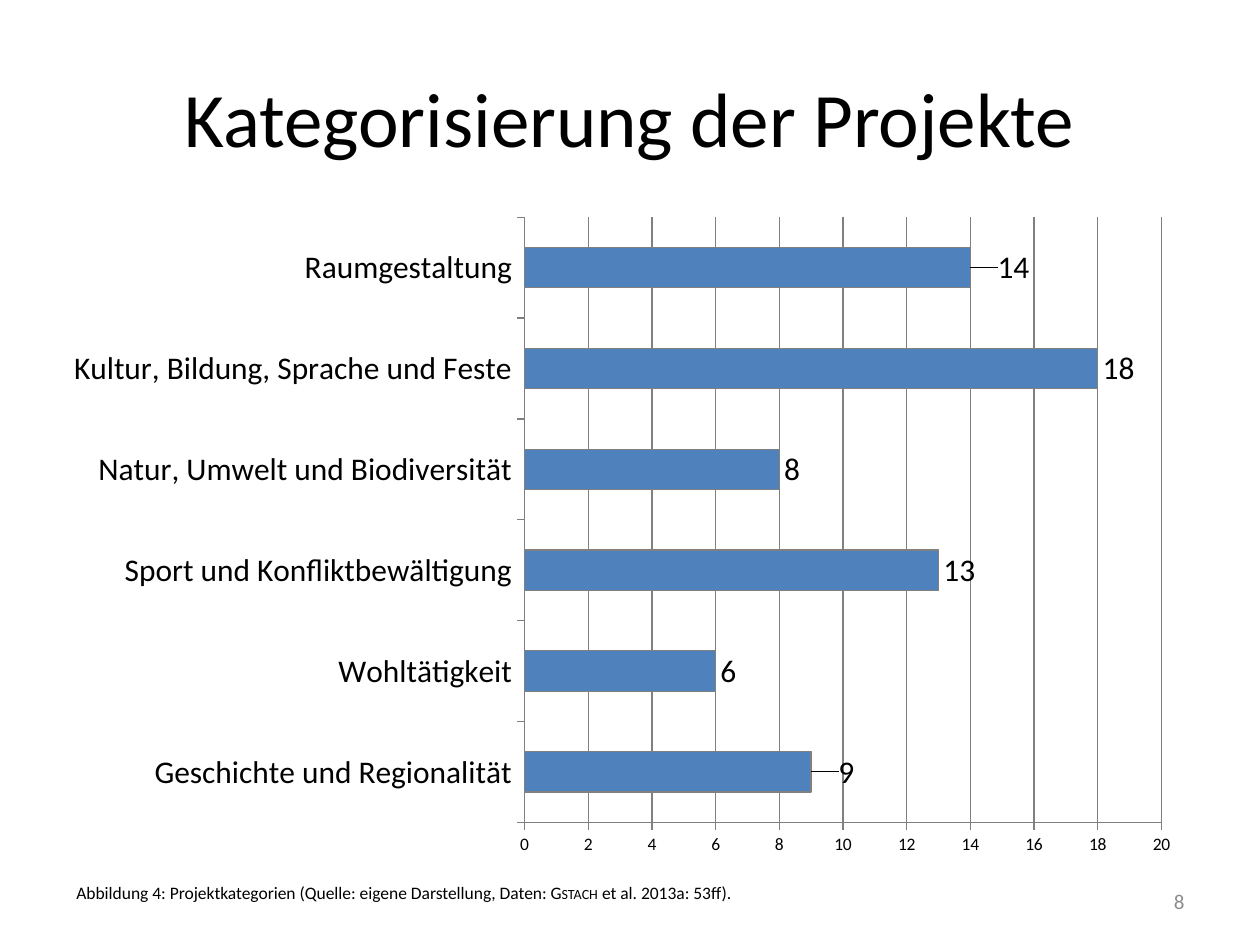
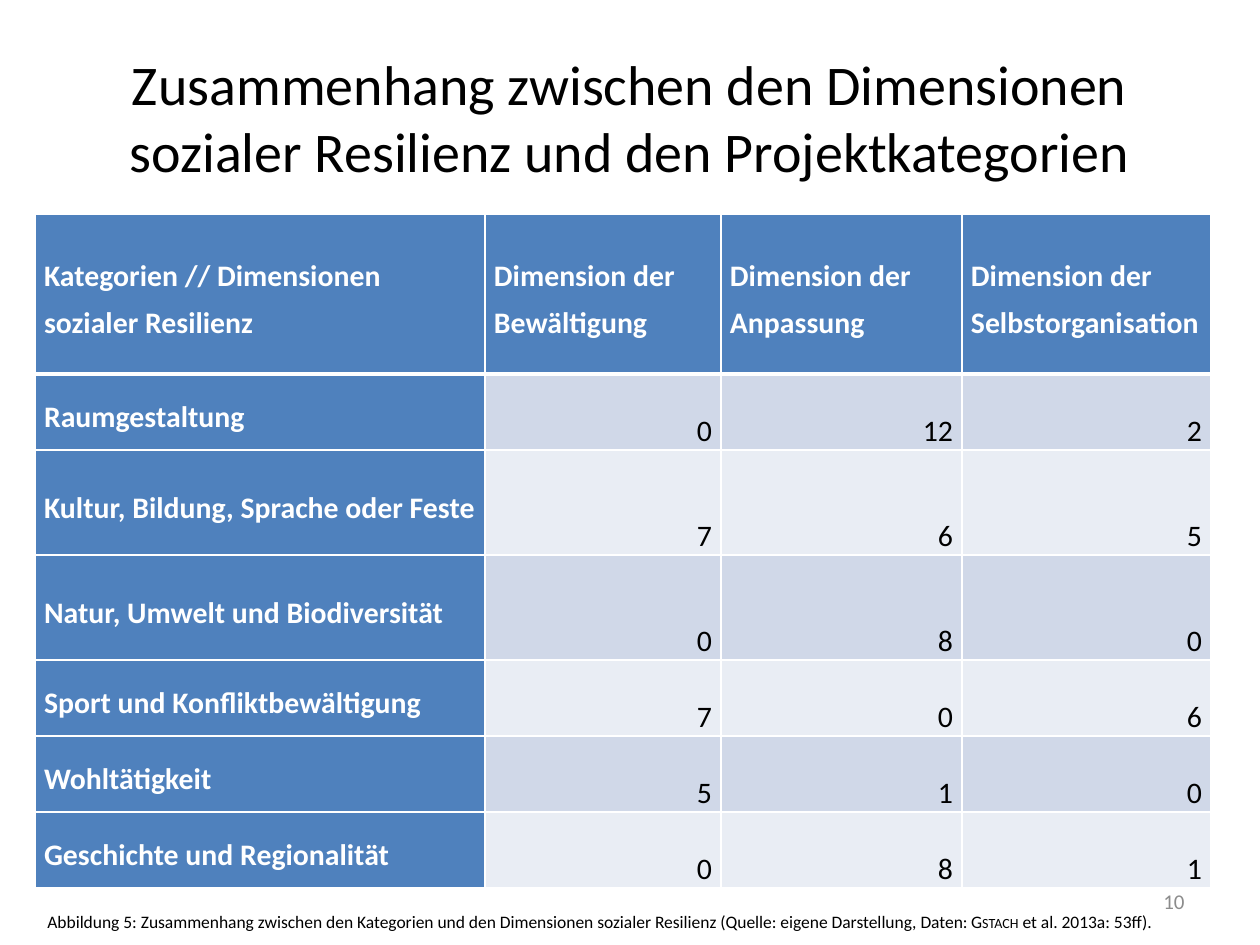
from lxml import etree
from pptx import Presentation
from pptx.chart.data import CategoryChartData
from pptx.dml.color import RGBColor
from pptx.enum.chart import XL_CHART_TYPE as ChartType, XL_LABEL_POSITION as LabelPos, XL_TICK_MARK as Tick
from pptx.enum.text import MSO_ANCHOR as Anchor, MSO_AUTO_SIZE as AutoSize, PP_ALIGN as Align
from pptx.oxml.ns import qn
from pptx.util import Emu, Pt

PX_PER_INCH = 126
FONT = "Calibri"
BLACK, WHITE, BLUE, GREY, LINE = "000000", "FFFFFF", "4F81BD", "8C8C8C", "808080"
BANDS = ("D0D8E8", "E9EDF4")

SLIDE_SIZE = (1260, 945)
TITLE_BOX = (63, 38, 1134, 157)
NUMBER_BOX = (903, 876, 294, 50)
CITATION = ("Gstach", " et al. 2013a: 53ff).")

PROJECTS = {
    "title": ("Kategorisierung der Projekte", 44),
    "number": "8",
    "caption": "Abbildung 4: Projektkategorien (Quelle: eigene Darstellung, Daten: ",
    "caption_box": (64, 876, 692, 34),
}
RESILIENCE = {
    "title": ("Zusammenhang zwischen den Dimensionen sozialer Resilienz und den Projektkategorien", 32),
    "number": "10",
    "caption": "Abbildung 5: Zusammenhang zwischen den Kategorien und den Dimensionen sozialer Resilienz "
               "(Quelle: eigene Darstellung, Daten: ",
    "caption_box": (35, 905, 1147, 34),
}

CHART_BOX = (74, 204, 1121, 665)
PLOT_LAYOUT = {"layoutTarget": "inner", "xMode": "edge", "yMode": "edge",
               "x": 0.4, "y": 0.02, "w": 0.57, "h": 0.91}
PROJECT_COUNTS = [  # from the bottom bar upwards
    ("Geschichte und Regionalität", 9),
    ("Wohltätigkeit", 6),
    ("Sport und Konfliktbewältigung", 13),
    ("Natur, Umwelt und Biodiversität", 8),
    ("Kultur, Bildung, Sprache und Feste", 18),
    ("Raumgestaltung", 14),
]
LABEL_SHIFTS = {0: 0.02, 5: 0.02}

TABLE_POS = (35, 214)
COLUMN_WIDTHS = (450, 236, 241, 249)
ROW_HEIGHTS = (160, 76, 105, 105, 76, 76, 76)
DIMENSIONS = [
    ("Kategorien // Dimensionen sozialer Resilienz", "Dimension der Bewältigung",
     "Dimension der Anpassung", "Dimension der Selbstorganisation"),
    ("Raumgestaltung", 0, 12, 2),
    ("Kultur, Bildung, Sprache oder Feste", 7, 6, 5),
    ("Natur, Umwelt und Biodiversität", 0, 8, 0),
    ("Sport und Konfliktbewältigung", 7, 0, 6),
    ("Wohltätigkeit", 5, 1, 0),
    ("Geschichte und Regionalität", 0, 8, 1),
]


def px(*lengths):
    return [Emu(round(n * 914400 / PX_PER_INCH)) for n in lengths]


def rgb(color):
    return RGBColor.from_string(color)


def set_all(target, values):
    for name, value in values.items():
        setattr(target, name, value)


def style_font(font, size, color=BLACK, bold=False):
    set_all(font, {"name": FONT, "size": Pt(size), "bold": bold})
    font.color.rgb = rgb(color)


def style_line(line, color=LINE, width=0.75):
    line.color.rgb = rgb(color)
    line.width = Pt(width)


def add_text(slide, box, text, size, color=BLACK, align=Align.LEFT, **frame_format):
    frame = slide.shapes.add_textbox(*px(*box)).text_frame
    set_all(frame, {"word_wrap": True, "vertical_anchor": Anchor.MIDDLE} | frame_format)
    paragraph = frame.paragraphs[0]
    paragraph.alignment = align
    for part in [text] if isinstance(text, str) else text:
        run = paragraph.add_run()
        run.text = part
        style_font(run.font, size, color)
    return paragraph


def add_base_slide(prs, content):
    """Add a slide with its title, page number and source caption."""
    slide = prs.slides.add_slide(prs.slide_layouts[6])
    title, size = content["title"]
    add_text(slide, TITLE_BOX, title, size, align=Align.CENTER)
    add_text(slide, NUMBER_BOX, content["number"], 12, GREY, Align.RIGHT)
    caption = add_text(slide, content["caption_box"], (content["caption"], *CITATION), 10,
                       word_wrap=False, vertical_anchor=Anchor.TOP,
                       auto_size=AutoSize.SHAPE_TO_FIT_TEXT)
    caption.runs[1].font._element.set("cap", "small")
    return slide


def make_layout(values):
    """Build a manual chart layout element."""
    layout = etree.Element(qn("c:layout"))
    manual = etree.SubElement(layout, qn("c:manualLayout"))
    for name, value in values.items():
        etree.SubElement(manual, qn(f"c:{name}")).set("val", str(value))
    return layout


def add_project_chart(slide):
    data = CategoryChartData()
    data.categories, counts = zip(*PROJECT_COUNTS)
    data.add_series("Series 1", counts)
    chart = slide.shapes.add_chart(ChartType.BAR_CLUSTERED, *px(*CHART_BOX), data).chart
    set_all(chart, {"has_legend": False, "has_title": False})
    style_font(chart.font, 10)

    for axis, size in ((chart.category_axis, 18), (chart.value_axis, 10)):
        axis.major_tick_mark = Tick.OUTSIDE
        style_font(axis.tick_labels.font, size)
        style_line(axis.format.line)
    set_all(chart.value_axis, {"minimum_scale": 0, "maximum_scale": 20, "major_unit": 2,
                               "has_major_gridlines": True})
    style_line(chart.value_axis.major_gridlines.format.line)

    plot = chart.plots[0]
    set_all(plot, {"gap_width": 150, "vary_by_categories": False})
    bars = plot.series[0]
    bars.format.fill.solid()
    bars.format.fill.fore_color.rgb = rgb(BLUE)
    style_line(bars.format.line)
    labels = bars.data_labels
    set_all(labels, {"show_value": True, "position": LabelPos.OUTSIDE_END})
    style_font(labels.font, 18)
    for index, shift in LABEL_SHIFTS.items():
        label = bars.points[index].data_label
        style_font(label.font, 18)
        label.position = LabelPos.OUTSIDE_END
    for element in labels._element.findall(qn("c:dLbl")):
        idx = element.find(qn("c:idx"))
        idx.addnext(make_layout({"x": LABEL_SHIFTS[int(idx.get("val"))], "y": 0}))

    plot_area = chart._chartSpace.chart.plotArea
    for old in plot_area.findall(qn("c:layout")):
        plot_area.remove(old)
    plot_area.insert(0, make_layout(PLOT_LAYOUT))


def set_borders(cell, widths):
    properties = cell._tc.get_or_add_tcPr()
    for position, (side, width) in enumerate(widths.items()):
        line = etree.Element(qn(f"a:ln{side}"), w=str(Pt(width)))
        fill = etree.SubElement(line, qn("a:solidFill"))
        etree.SubElement(fill, qn("a:srgbClr")).set("val", WHITE)
        properties.insert(position, line)


def add_resilience_table(slide):
    box = (*TABLE_POS, sum(COLUMN_WIDTHS), sum(ROW_HEIGHTS))
    table = slide.shapes.add_table(len(ROW_HEIGHTS), len(COLUMN_WIDTHS), *px(*box)).table
    for column, width in zip(table.columns, px(*COLUMN_WIDTHS)):
        column.width = width
    for row, height in zip(table.rows, px(*ROW_HEIGHTS)):
        row.height = height

    margin, none = px(9, 0)
    for r, entries in enumerate(DIMENSIONS):
        for c, entry in enumerate(entries):
            heading = r == 0 or c == 0
            cell = table.cell(r, c)
            set_all(cell, {"text": str(entry), "margin_left": margin, "margin_right": margin,
                           "margin_top": none, "margin_bottom": none,
                           "vertical_anchor": Anchor.MIDDLE if heading else Anchor.BOTTOM})
            cell.fill.solid()
            cell.fill.fore_color.rgb = rgb(BLUE if heading else BANDS[(r - 1) % 2])
            set_borders(cell, {"L": 1, "R": 1, "T": 3 if r == 1 else 1, "B": 3 if r == 0 else 1})
            paragraph = cell.text_frame.paragraphs[0]
            set_all(paragraph, {"line_spacing": 1.3,
                                "alignment": Align.LEFT if heading else Align.RIGHT})
            style_font(paragraph.runs[0].font, 17, WHITE if heading else BLACK, heading)


def main():
    prs = Presentation()
    prs.slide_width, prs.slide_height = px(*SLIDE_SIZE)
    add_project_chart(add_base_slide(prs, PROJECTS))
    add_resilience_table(add_base_slide(prs, RESILIENCE))
    prs.save("out.pptx")


if __name__ == "__main__":
    main()
